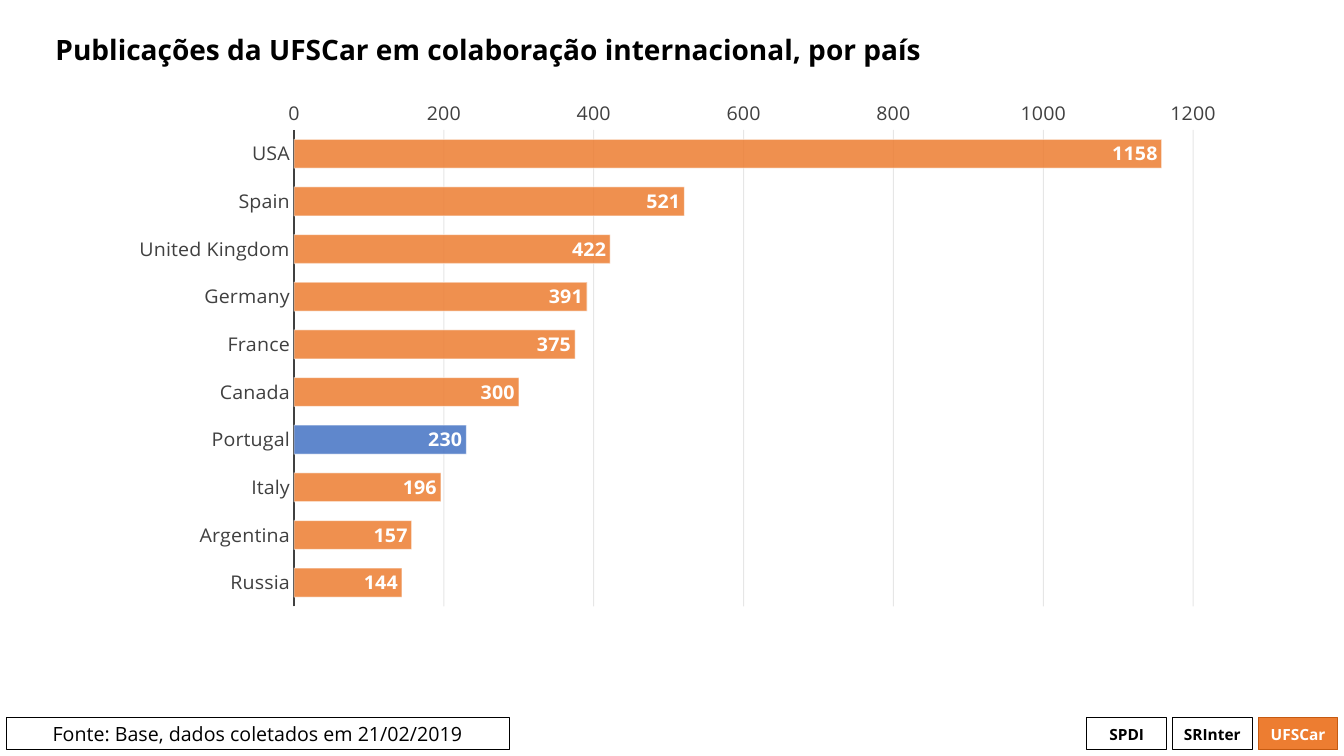
"""Builds the slide on international co-publications by country."""
from dataclasses import dataclass
from typing import Optional

from lxml.etree import SubElement
from pptx import Presentation
from pptx.chart.data import CategoryChartData
from pptx.dml.color import RGBColor
from pptx.enum.chart import (XL_AXIS_CROSSES, XL_CHART_TYPE, XL_LABEL_POSITION,
                             XL_TICK_MARK)
from pptx.enum.text import MSO_ANCHOR, PP_ALIGN
from pptx.oxml import parse_xml
from pptx.oxml.ns import nsdecls, qn
from pptx.util import Inches, Pt

FONT = "Open Sans"
COLORS = {"black": "000000", "white": "FFFFFF", "orange": "ED7D31", "rust": "C55A11",
          "blue": "4472C4", "gray": "404040", "grid": "0D0D0D"}
PUBLICATIONS = {"USA": 1158, "Spain": 521, "United Kingdom": 422, "Germany": 391,
                "France": 375, "Canada": 300, "Portugal": 230, "Italy": 196,
                "Argentina": 157, "Russia": 144}
HIGHLIGHT = "Portugal"
PLOT_AREA = {"x": 0.16, "y": 0.02, "w": 0.81, "h": 0.89}


@dataclass
class Box:
    text: str
    left: float
    width: float = 0.79
    size: int = 11
    bold: bool = True
    color: str = "black"
    line: str = "black"
    fill: Optional[str] = None


TABS = [Box("SPDI", 10.78), Box("SRInter", 11.63),
        Box("UFSCar", 12.48, color="white", line="rust", fill="orange")]
SOURCE = Box("Fonte: Base, dados coletados em 21/02/2019", 0.06, 4.99, 14, False)


def rgb(name: str) -> RGBColor:
    return RGBColor.from_string(COLORS[name])


def set_font(font, size: int, color: str, bold: bool = False) -> None:
    font.name, font.size, font.bold = FONT, Pt(size), bold
    font.color.rgb = rgb(color)


def set_line(line, color: str, width: float = 0.75) -> None:
    line.color.rgb, line.width = rgb(color), Pt(width)


def set_alpha(element, percent: int) -> None:
    SubElement(element, qn("a:alpha"), val=str(percent * 1000))


def add_box(s, box: Box) -> None:
    sp = s.shapes.add_shape(1, Inches(box.left), Inches(7.12),
                            Inches(box.width), Inches(0.32))
    sp.shadow.inherit = False
    if box.fill:
        sp.fill.solid()
        sp.fill.fore_color.rgb = rgb(box.fill)
    else:
        sp.fill.background()
    set_line(sp.line, box.line)
    tf = sp.text_frame
    tf.margin_left = tf.margin_right = 0
    tf.vertical_anchor = MSO_ANCHOR.MIDDLE
    p = tf.paragraphs[0]
    p.text, p.alignment = box.text, PP_ALIGN.CENTER
    set_font(p.font, box.size, box.color, box.bold)


def add_title(s, text: str) -> None:
    sp = s.shapes.title
    sp.left, sp.top = Inches(0.45), Inches(0.06)
    sp.width, sp.height = Inches(12.41), Inches(0.91)
    tf = sp.text_frame
    tf.vertical_anchor = MSO_ANCHOR.MIDDLE
    p = tf.paragraphs[0]
    p.text, p.alignment, p.line_spacing = text, PP_ALIGN.LEFT, 0.9
    set_font(p.font, 20, "black", True)


def paint_bar(fmt, color: str) -> None:
    fmt.fill.solid()
    fmt.fill.fore_color.rgb = rgb(color)
    set_line(fmt.line, "white")


def style_bars(plot) -> None:
    plot.gap_width, plot.vary_by_categories = 65, False
    series = plot.series[0]
    series.invert_if_negative = False
    paint_bar(series.format, "orange")
    paint_bar(series.points[list(PUBLICATIONS).index(HIGHLIGHT)].format, "blue")
    for clr in series._element.iter(qn("a:srgbClr")):
        in_line = clr.getparent().getparent().tag == qn("a:ln")
        set_alpha(clr, 50 if in_line else 85)
    labels = series.data_labels
    labels.show_value, labels.position = True, XL_LABEL_POSITION.INSIDE_END
    set_font(labels.font, 14, "white", True)


def style_axes(chart) -> None:
    cat, val = chart.category_axis, chart.value_axis
    for axis in (cat, val):
        axis.major_tick_mark = axis.minor_tick_mark = XL_TICK_MARK.NONE
        set_font(axis.tick_labels.font, 14, "gray")
    cat.reverse_order, cat.crosses = True, XL_AXIS_CROSSES.MAXIMUM
    set_line(cat.format.line, "gray", 1.5)
    val.minimum_scale, val.maximum_scale, val.major_unit = 0, 1200, 200
    val.format.line.fill.background()
    val.has_major_gridlines = True
    grid = val.major_gridlines.format.line
    set_line(grid, "grid")
    for clr in val._element.find(qn("c:majorGridlines")).iter(qn("a:srgbClr")):
        set_alpha(clr, 10)


def place_plot(chart) -> None:
    area = chart._chartSpace.chart.plotArea
    for old in area.findall(qn("c:layout")):
        area.remove(old)
    modes = '<c:layoutTarget val="inner"/><c:xMode val="edge"/><c:yMode val="edge"/>'
    sizes = "".join(f'<c:{k} val="{v}"/>' for k, v in PLOT_AREA.items())
    area.insert(0, parse_xml(f'<c:layout {nsdecls("c")}><c:manualLayout>{modes}{sizes}'
                             '</c:manualLayout></c:layout>'))


def add_bar_chart(s) -> None:
    data = CategoryChartData()
    data.categories = list(PUBLICATIONS)
    data.add_series("Series 1", list(PUBLICATIONS.values()))
    chart = s.shapes.add_chart(XL_CHART_TYPE.BAR_CLUSTERED, Inches(1.15), Inches(0.99),
                               Inches(11.02), Inches(5.51), data).chart
    chart.has_title = chart.has_legend = False
    set_font(chart.font, 14, "black")
    style_bars(chart.plots[0])
    style_axes(chart)
    place_plot(chart)
    white = f'<a:solidFill><a:srgbClr val="{COLORS["white"]}"/></a:solidFill>'
    chart._chartSpace.chart.addnext(parse_xml(
        f'<c:spPr {nsdecls("c", "a")}>{white}<a:ln w="9525">{white}</a:ln></c:spPr>'))


def main() -> None:
    prs = Presentation()
    prs.slide_width, prs.slide_height = Inches(13.33), Inches(7.5)
    s = prs.slides.add_slide(prs.slide_layouts.get_by_name("Title Only"))
    for box in (*TABS, SOURCE):
        add_box(s, box)
    add_title(s, "Publicações da UFSCar em colaboração internacional, por país")
    add_bar_chart(s)
    prs.save("out.pptx")


if __name__ == "__main__":
    main()
